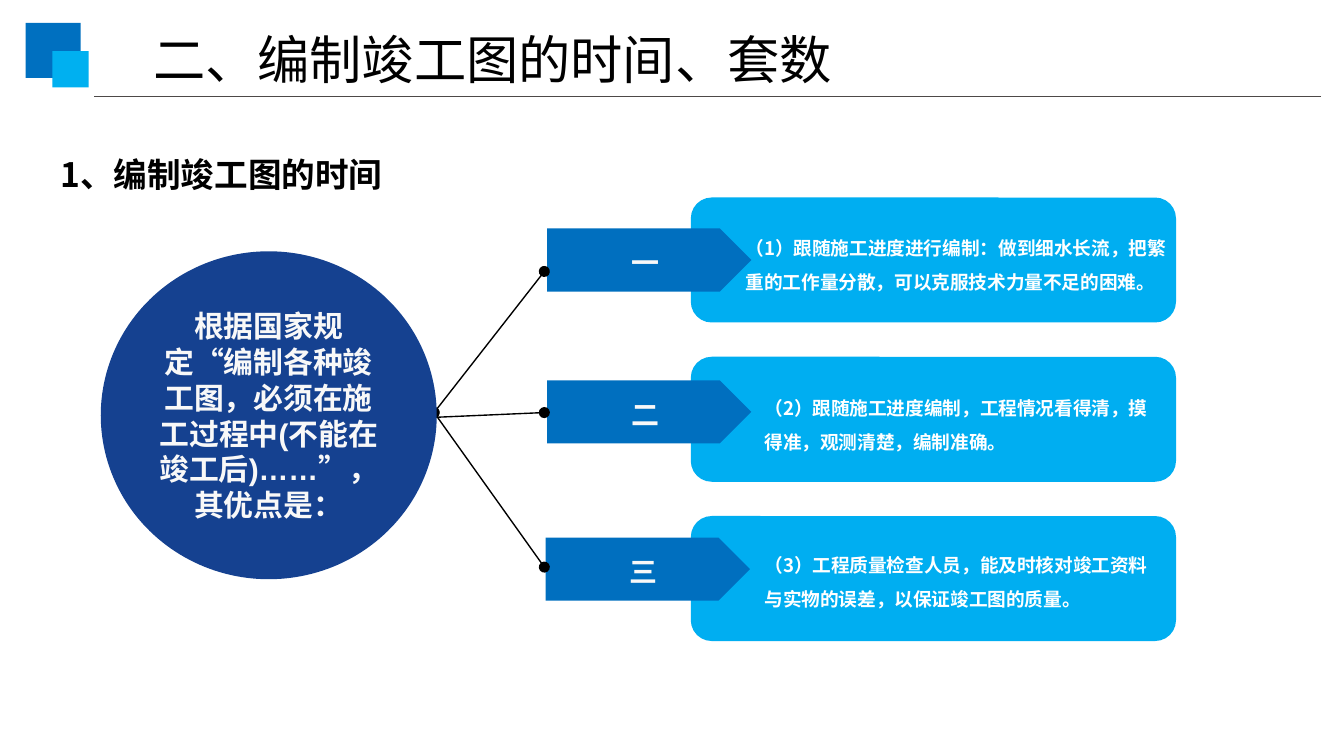
from dataclasses import dataclass

import pptx
import pptx.dml.color
import pptx.enum.shapes
import pptx.enum.text
import pptx.oxml
import pptx.oxml.ns
import pptx.util

Inches = pptx.util.Inches
RGBColor = pptx.dml.color.RGBColor
Shape = pptx.enum.shapes.MSO_SHAPE
Align = pptx.enum.text.PP_ALIGN
Anchor = pptx.enum.text.MSO_ANCHOR

BLUE = RGBColor(0x00, 0x70, 0xC0)
SKY = RGBColor(0x00, 0xB0, 0xF0)
CARD_BLUE = RGBColor(0x00, 0xAE, 0xF1)
LABEL_BLUE = RGBColor(0x00, 0x6F, 0xBF)
NAVY = RGBColor(0x15, 0x41, 0x90)
GREY = RGBColor(0x4D, 0x49, 0x48)
BLACK = RGBColor(0x00, 0x00, 0x00)
WHITE = RGBColor(0xFF, 0xFF, 0xFF)
PALE = RGBColor(0xF8, 0xF8, 0xF8)
CJK = "Noto Sans CJK SC"

CARD_TOP = 1.47
CARD_STEP = 2.37 / 2
TEXT_INSETS = (0.1, 0.05, 0.1, 0.05)
SHAPE_INSETS = (0.07, 0.04, 0.07, 0.04)


@dataclass
class Area:
    left: float
    top: float
    width: float
    height: float

    def lengths(self) -> list:
        return [Inches(n) for n in (self.left, self.top, self.width, self.height)]


@dataclass
class Advantage:
    label: str
    text: str
    label_area: Area
    text_area: Area
    line_start: tuple[float, float]
    line_end: tuple[float, float]


ADVANTAGES = [
    Advantage(
        "一", "（1）跟随施工进度进行编制：做到细水长流，把繁重的工作量分散，可以克服技术力量不足的困难。",
        Area(4.07, 1.7, 1.52, 0.47), Area(5.45, 1.63, 3.36, 0.61), (3.23, 3.07), (4.05, 2.02),
    ),
    Advantage(
        "二", "（2）跟随施工进度编制，工程情况看得清，摸得准，观测清楚，编制准确。",
        Area(4.07, 2.83, 1.52, 0.47), Area(5.59, 2.82, 3.07, 0.58), (3.13, 3.11), (4.05, 3.07),
    ),
    Advantage(
        "三", "（3）工程质量检查人员，能及时核对竣工资料与实物的误差，以保证竣工图的质量。",
        Area(4.06, 4, 1.52, 0.47), Area(5.59, 3.99, 3.07, 0.58), (3.23, 3.07), (4.05, 4.22),
    ),
]


def write(box, text: str, *, size: float, color: RGBColor, font: str = CJK, bold: bool = False,
          align=Align.LEFT, anchor=Anchor.TOP, spacing: float = 1.0,
          insets: tuple = TEXT_INSETS) -> None:
    frame = box.text_frame
    frame.word_wrap = True
    frame.auto_size = pptx.enum.text.MSO_AUTO_SIZE.NONE
    frame.vertical_anchor = anchor
    frame.margin_left, frame.margin_top, frame.margin_right, frame.margin_bottom = map(Inches, insets)
    para = frame.paragraphs[0]
    para.alignment = align
    para.line_spacing = spacing
    span = para.add_run()
    span.text = text
    span.font.name = font
    span.font.size = pptx.util.Pt(size)
    span.font.bold = bold
    span.font.color.rgb = color
    east_asian = pptx.oxml.parse_xml(f'<a:ea {pptx.oxml.ns.nsdecls("a")} typeface="{CJK}"/>')
    span.font._element.find(pptx.oxml.ns.qn("a:latin")).addnext(east_asian)


def add_block(page, kind, area: Area, color: RGBColor):
    block = page.shapes.add_shape(kind, *area.lengths())
    block.shadow.inherit = False
    block.fill.solid()
    block.fill.fore_color.rgb = color
    block.line.fill.background()
    return block


def add_line(page, start: tuple[float, float], end: tuple[float, float], color: RGBColor,
             dots: bool = False) -> None:
    line = page.shapes.add_connector(
        pptx.enum.shapes.MSO_CONNECTOR.STRAIGHT, *map(Inches, start + end))
    line.line.color.rgb = color
    line.line.width = pptx.util.Pt(0.75)
    namespace = pptx.oxml.ns.nsdecls("a")
    if dots:
        outline = line.line._get_or_add_ln()
        for tag in ("headEnd", "tailEnd"):
            outline.append(pptx.oxml.parse_xml(f'<a:{tag} {namespace} type="oval"/>'))
    line._element.spPr.append(pptx.oxml.parse_xml(f"<a:effectLst {namespace}/>"))


def add_text(page, area: Area, text: str, **style):
    box = page.shapes.add_textbox(*area.lengths())
    write(box, text, **style)
    return box


def main() -> None:
    deck = pptx.Presentation()
    deck.slide_width = Inches(10)
    deck.slide_height = deck.slide_width * 9 // 16
    page = deck.slides.add_slide(deck.slide_layouts[5])

    add_block(page, Shape.RECTANGLE, Area(0.19, 0.17, 0.41, 0.41), BLUE)
    add_block(page, Shape.RECTANGLE, Area(0.39, 0.38, 0.27, 0.27), SKY)
    add_line(page, (9.83, 0.72), (0.7, 0.72), GREY)

    title = page.shapes.title
    title.left, title.top, title.width, title.height = Area(1.04, 0.15, 5.3, 0.57).lengths()
    write(title, "二、编制竣工图的时间、套数", size=28, color=BLACK, anchor=Anchor.MIDDLE)

    for index, advantage in enumerate(ADVANTAGES):
        card_area = Area(5.14, CARD_TOP + index * CARD_STEP, 3.61, 0.93)
        add_block(page, Shape.ROUNDED_RECTANGLE, card_area, CARD_BLUE)
        add_text(page, advantage.text_area, advantage.text, size=10, color=WHITE,
                 bold=True, spacing=1.5)

    label_style = dict(font="Arial", bold=True, align=Align.CENTER, anchor=Anchor.MIDDLE,
                       insets=SHAPE_INSETS)
    for advantage in ADVANTAGES:
        label = add_block(page, Shape.PENTAGON, advantage.label_area, LABEL_BLUE)
        write(label, " ", size=18, color=WHITE, **label_style)
        write(label, advantage.label, size=15, color=PALE, **label_style)
    for advantage in ADVANTAGES:
        add_line(page, advantage.line_start, advantage.line_end, BLACK, dots=True)

    circle = add_block(page, Shape.OVAL, Area(0.75, 1.87, 2.5, 2.44), NAVY)
    write(circle, "根据国家规定“编制各种竣工图，必须在施工过程中(不能在竣工后)……”， 其优点是：",
          size=16, color=PALE, **label_style)

    heading_style = dict(size=18, color=BLACK, bold=True, align=Align.JUSTIFY)
    heading = add_text(page, Area(0.35, 1.1, 2.62, 0.4), "1", **heading_style)
    write(heading, "、编制竣工图的时间", font="Calibri", **heading_style)

    deck.save("out.pptx")


if __name__ == "__main__":
    main()
